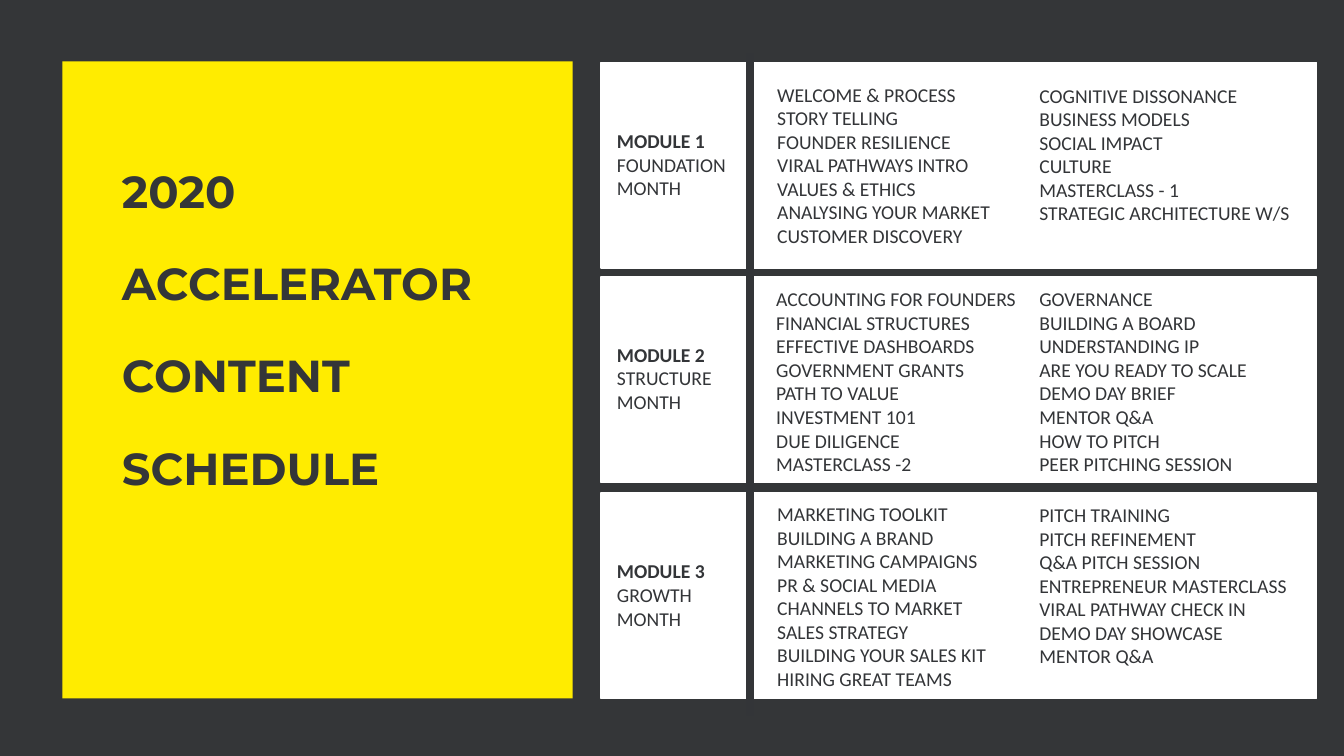
from lxml import etree
from pptx import Presentation
from pptx.dml.color import RGBColor
from pptx.enum.shapes import MSO_CONNECTOR, MSO_SHAPE
from pptx.enum.text import MSO_ANCHOR, MSO_AUTO_SIZE, PP_ALIGN
from pptx.oxml.ns import qn
from pptx.util import Pt

RECTANGLE = MSO_SHAPE.RECTANGLE
STRAIGHT = MSO_CONNECTOR.STRAIGHT
TOP = MSO_ANCHOR.TOP
NO_AUTOFIT = MSO_AUTO_SIZE.NONE
LEFT = PP_ALIGN.LEFT
TITLE_ONLY = 5

EMU_PER_PX = 9144  # 100 px to the inch
YELLOW, WHITE = "FFEC00", "FFFFFF"
CHARCOAL, INK = "343638", "333538"

TITLE = ["2020", "ACCELERATOR", "CONTENT", "SCHEDULE"]
# Each module: (label top, label lines), then (left, top, topics) per list
MODULES = [
    ((123, ["MODULE 1", "FOUNDATION", "MONTH"]), [
        (761, 77, ["WELCOME & PROCESS", "STORY TELLING", "FOUNDER RESILIENCE",
                   "VIRAL PATHWAYS INTRO", "VALUES & ETHICS",
                   "ANALYSING YOUR MARKET", "CUSTOMER DISCOVERY"]),
        (1021, 78, ["COGNITIVE DISSONANCE", "BUSINESS MODELS", "SOCIAL IMPACT",
                    "CULTURE", "MASTERCLASS - 1", "STRATEGIC ARCHITECTURE W/S"]),
    ]),
    ((335, ["MODULE 2", "STRUCTURE", "MONTH"]), [
        (760, 280, ["ACCOUNTING FOR FOUNDERS", "FINANCIAL STRUCTURES",
                    "EFFECTIVE DASHBOARDS", "GOVERNMENT GRANTS", "PATH TO VALUE",
                    "INVESTMENT 101", "DUE DILIGENCE", "MASTERCLASS -2"]),
        (1021, 280, ["GOVERNANCE", "BUILDING A BOARD", "UNDERSTANDING IP",
                     "ARE YOU READY TO SCALE", "DEMO DAY BRIEF", "MENTOR Q&A",
                     "HOW TO PITCH", "PEER PITCHING SESSION"]),
    ]),
    ((550, ["MODULE 3", "GROWTH", "MONTH"]), [
        (761, 493, ["MARKETING TOOLKIT", "BUILDING A BRAND", "MARKETING CAMPAIGNS",
                    "PR & SOCIAL MEDIA", "CHANNELS TO MARKET", "SALES STRATEGY",
                    "BUILDING YOUR SALES KIT", "HIRING GREAT TEAMS"]),
        (1021, 494, ["PITCH TRAINING", "PITCH REFINEMENT", "Q&A PITCH SESSION",
                     "ENTREPRENEUR MASTERCLASS", "VIRAL PATHWAY CHECK IN",
                     "DEMO DAY SHOWCASE", "MENTOR Q&A"]),
    ]),
]


def px(*lengths):
    return [length * EMU_PER_PX for length in lengths]


def color(hex_string):
    return RGBColor.from_string(hex_string)


def write(frame, lines, font="Calibri", size=14, ink=INK, bold_lines=0,
          line_spacing=None, space_after=None, wrap=True):
    """Fill a text frame, one paragraph a line; the first bold_lines are bold."""
    frame.word_wrap = wrap
    frame.auto_size = NO_AUTOFIT
    frame.vertical_anchor = TOP
    for index, line in enumerate(lines):
        paragraph = frame.add_paragraph() if index else frame.paragraphs[0]
        paragraph.alignment = LEFT
        if line_spacing:
            paragraph.line_spacing = Pt(line_spacing)
        if space_after:
            paragraph.space_after = Pt(space_after)
        run = paragraph.add_run()
        run.text = line
        run.font.name = font
        run.font.size = Pt(size)
        run.font.bold = index < bold_lines
        run.font.color.rgb = color(ink)


class ScheduleSlide:
    def __init__(self, deck):
        self.slide = deck.slides.add_slide(deck.slide_layouts[TITLE_ONLY])
        self.shapes = self.slide.shapes
        background = self.slide.background.fill
        background.solid()
        background.fore_color.rgb = color(CHARCOAL)

    def panel(self, left, top, width, height, fill, outline=None):
        panel = self.shapes.add_shape(RECTANGLE, *px(left, top, width, height))
        panel.shadow.inherit = False
        panel.fill.solid()
        panel.fill.fore_color.rgb = color(fill)
        if outline:
            panel.line.color.rgb = color(outline)
            panel.line.width = Pt(1)
        else:
            panel.line.fill.background()
        return panel

    def title(self, lines, left, top, width, height, backdrop):
        title = self.shapes.title
        title.left, title.top, title.width, title.height = px(left, top, width, height)
        write(title.text_frame, lines, font="Montserrat", size=32, ink=CHARCOAL,
              bold_lines=len(lines), line_spacing=60, space_after=6)
        title.element.addprevious(backdrop.element)

    def divider(self, x, top, bottom):
        divider = self.shapes.add_connector(STRAIGHT, *px(x, top, x, bottom))
        divider.line.color.rgb = color(INK)
        divider.line.width = Pt(6)
        etree.SubElement(divider.element.spPr, qn("a:effectLst"))

    def text(self, lines, left, top, width, height, **style):
        box = self.shapes.add_textbox(*px(left, top, width, height))
        write(box.text_frame, lines, **style)


def main():
    deck = Presentation()
    deck.slide_width, deck.slide_height = px(1333, 750)
    schedule = ScheduleSlide(deck)

    title_panel = schedule.panel(62, 61, 506, 632, YELLOW)
    schedule.title(TITLE, 111, 127, 418, 362, title_panel)

    for row in range(len(MODULES)):
        schedule.panel(596, 62 + row * 427 // 2, 710, 204, WHITE, outline=WHITE)
    schedule.divider(744, 53, 710)

    for (label_top, label), topic_lists in MODULES:
        schedule.text(label, 602, label_top, 129, 81, bold_lines=1, wrap=False)
        for left, top, topics in topic_lists:
            width = 345 if left < 1000 else 291
            schedule.text(topics, left, top, width, 10 + 24 * len(topics))

    deck.save("out.pptx")


if __name__ == "__main__":
    main()
